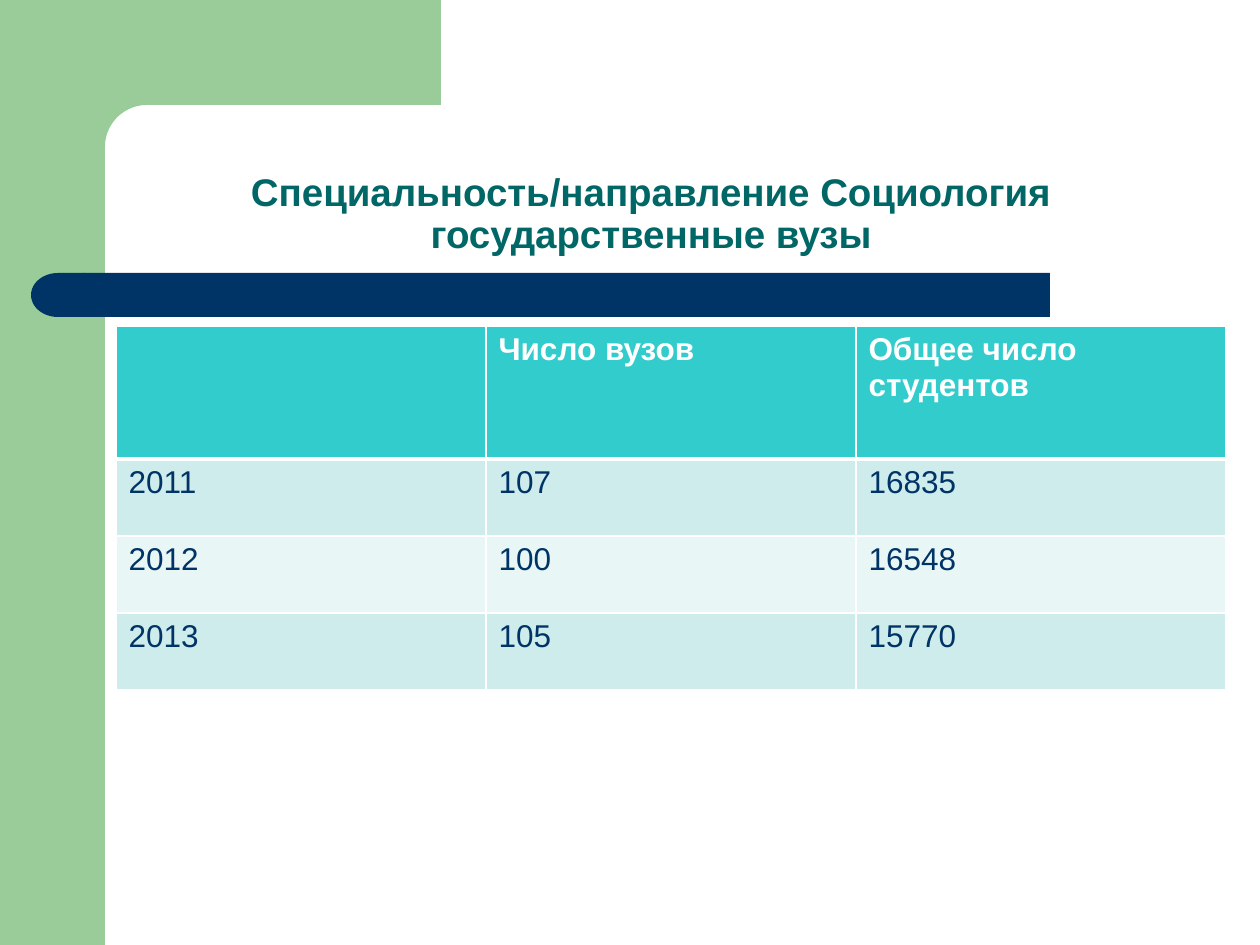
import math

from lxml import etree
from pptx import Presentation
from pptx import util as u
from pptx.dml.color import RGBColor
from pptx.enum import shapes, text
from pptx.oxml.ns import qn

PX = 914400 / 126
FONT = "Arial"
GREEN = RGBColor(0x99, 0xCC, 0x99)
NAVY = RGBColor(0x00, 0x33, 0x66)
TEAL = RGBColor(0x00, 0x66, 0x66)
TURQUOISE = RGBColor(0x33, 0xCC, 0xCC)
BAND_DARK = RGBColor(0xCE, 0xEC, 0xEC)
BAND_LIGHT = RGBColor(0xE8, 0xF6, 0xF6)
WHITE = RGBColor(0xFF, 0xFF, 0xFF)


def emu(px):
    return u.Emu(round(px * PX))


class SlideBuilder:
    def __init__(self, page):
        self.page = page

    def paint(self, shape, color):
        shape.shadow.inherit = False
        shape.fill.solid()
        shape.fill.fore_color.rgb = color
        shape.line.fill.background()
        return shape

    def shape(self, kind, left, top, width, height, color):
        box = self.page.shapes.add_shape(kind, *map(emu, (left, top, width, height)))
        return self.paint(box, color)

    def outline(self, points, color):
        start, *rest = [(emu(x), emu(y)) for x, y in points]
        builder = self.page.shapes.build_freeform(*start)
        builder.add_line_segments(rest, close=True)
        return self.paint(builder.convert_to_shape(), color)

    def span(self, para, words, size, color, bold):
        span = para.add_run()
        span.text = words
        span.font.name = FONT
        span.font.size = u.Pt(size)
        span.font.bold = bold
        span.font.color.rgb = color

    def title(self, left, top, width, height, lines):
        box = self.page.shapes.title
        box.left, box.top, box.width, box.height = map(emu, (left, top, width, height))
        frame = box.text_frame
        frame.word_wrap = True
        frame.auto_size = text.MSO_AUTO_SIZE.NONE
        frame.vertical_anchor = text.MSO_ANCHOR.BOTTOM
        para = frame.paragraphs[0]
        para.alignment = text.PP_ALIGN.CENTER
        para.line_spacing = 0.9
        for index, line in enumerate(lines):
            if index:
                para.add_line_break()
            self.span(para, line, 22, TEAL, True)

    def border(self, cell, side, points):
        line = etree.SubElement(cell._tc.get_or_add_tcPr(), qn(f"a:ln{side}"),
                                w=str(u.Pt(points)))
        fill = etree.SubElement(line, qn("a:solidFill"))
        etree.SubElement(fill, qn("a:srgbClr"), val=str(WHITE))

    def table(self, left, top, column_width, row_heights, rows):
        columns = len(rows[0])
        frame = self.page.shapes.add_table(
            len(rows), columns, emu(left), emu(top),
            emu(column_width * columns), emu(sum(row_heights)))
        table = frame.table
        for column in table.columns:
            column.width = emu(column_width)
        for r, values in enumerate(rows):
            table.rows[r].height = emu(row_heights[r])
            header = r == 0
            color = TURQUOISE if header else (BAND_LIGHT, BAND_DARK)[r % 2]
            for c, value in enumerate(values):
                cell = table.cell(r, c)
                for side in "LRTB":
                    # A thick rule separates the header from the years
                    heavy = (r, side) in ((0, "B"), (1, "T"))
                    self.border(cell, side, 3 if heavy else 1)
                cell.fill.solid()
                cell.fill.fore_color.rgb = color
                if value:
                    self.span(cell.text_frame.paragraphs[0], value, 18,
                              WHITE if header else NAVY, header)


def main():
    deck = Presentation()
    deck.slide_width, deck.slide_height = emu(1260), emu(945)
    slide = SlideBuilder(deck.slides.add_slide(deck.slide_layouts[5]))

    # Green side band and top block with a rounded inner corner
    slide.shape(shapes.MSO_SHAPE.RECTANGLE, 0, 0, 105, 945, GREEN)
    radius, center = 42, 147
    corner = [(center - radius * math.sin(math.radians(a)),
               center - radius * math.cos(math.radians(a))) for a in range(0, 91, 5)]
    slide.outline([(63, 0), (441, 0), (441, 105), *corner, (105, 161), (63, 161)], GREEN)

    # Navy bar with a rounded left end
    slide.shape(shapes.MSO_SHAPE.RECTANGLE, 84, 273, 966, 44, NAVY)
    cap = slide.shape(shapes.MSO_SHAPE.FLOWCHART_DELAY, 31, 273, 54, 44, NAVY)
    cap.rotation = 180

    # Title
    slide.title(105, 105, 1092, 158,
                ["Специальность/направление Социология", "государственные вузы"])

    # Universities and students by year
    slide.table(116, 326, 370, [133, 77, 77, 77], [
        ("", "Число вузов", "Общее число студентов"),
        ("2011", "107", "16835"),
        ("2012", "100", "16548"),
        ("2013", "105", "15770"),
    ])
    deck.save("out.pptx")


if __name__ == "__main__":
    main()
